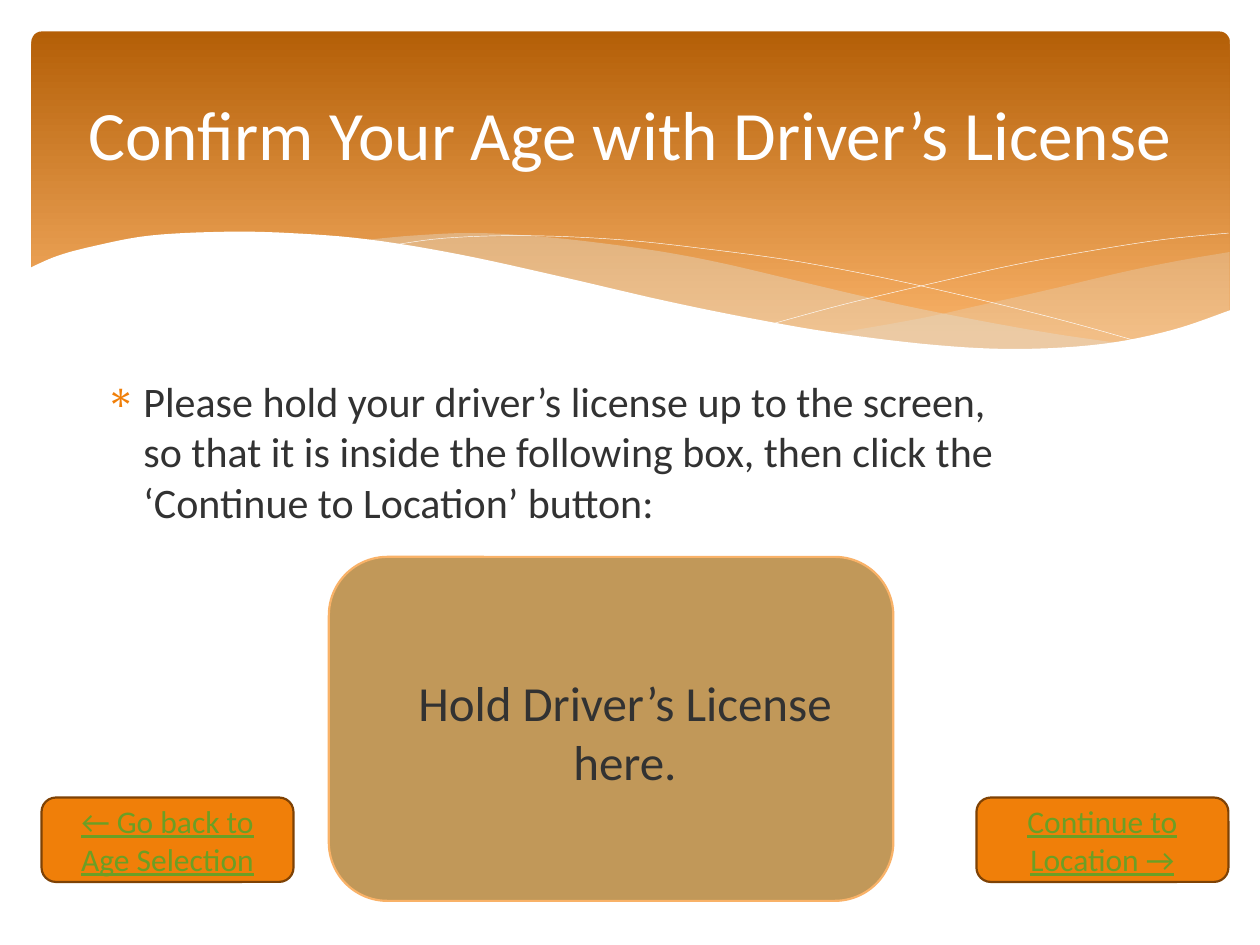
from pptx import Presentation
from pptx import util as u
from pptx.dml.color import RGBColor
from pptx.enum import shapes, text
from pptx.oxml.ns import qn
from lxml import etree

FONT = "Calibri"
WHITE = RGBColor(0xFF, 0xFF, 0xFF)
INK = RGBColor(0x32, 0x32, 0x32)
ORANGE = RGBColor(0xF0, 0x7F, 0x09)
DARK_ORANGE = RGBColor(0xB4, 0x5F, 0x07)
LIGHT_ORANGE = RGBColor(0xF9, 0xB2, 0x68)
BROWN = RGBColor(0x7E, 0x42, 0x05)
TAN = RGBColor(0xC1, 0x98, 0x59)
SAND = RGBColor(0xE3, 0xDE, 0xD1)
GREEN = RGBColor(0x6B, 0x9F, 0x25)

# Knots of the banner's waves, in inches
RIGHT_TOP = [(6.61, 2.65), (7.29, 2.53), (7.79, 2.42), (8.32, 2.3),
             (8.91, 2.16), (9.35, 2.07), (9.76, 2)]
RIGHT_BOTTOM = [(9.76, 2.47), (9.49, 2.57), (9.13, 2.67), (8.63, 2.75),
                (8.03, 2.78), (7.32, 2.74), (6.61, 2.65)]
MIDDLE_TOP = [(2.86, 1.91), (3.28, 1.87), (3.8, 1.85), (4.42, 1.89),
              (5.14, 1.98), (5.69, 2.08), (6.29, 2.22), (7.06, 2.4),
              (7.75, 2.54), (8.37, 2.65), (8.93, 2.73)]
MIDDLE_BOTTOM = [(8.93, 2.73), (8.57, 2.77), (8.07, 2.78), (7.48, 2.76),
                 (6.8, 2.68), (6.01, 2.55), (5.3, 2.4), (4.49, 2.22),
                 (3.83, 2.07), (3.42, 1.99), (2.86, 1.91)]
FALLING_LINE = [(3.09, 1.95), (3.53, 1.89), (4.16, 1.87), (4.89, 1.9),
                (5.56, 1.97), (6.36, 2.08), (7.27, 2.26), (8.31, 2.51),
                (9.07, 2.72)]
RISING_LINE = [(6.13, 2.57), (6.72, 2.41), (7.48, 2.23), (8.06, 2.1),
               (8.66, 1.99), (9.24, 1.9), (9.75, 1.85)]
PAPER_EDGE = [(9.77, 2.46), (9.3, 2.62), (8.75, 2.73), (8.09, 2.77),
              (7.44, 2.74), (6.68, 2.65), (6.03, 2.54), (5.29, 2.39),
              (4.47, 2.2), (3.65, 2.02), (2.92, 1.9), (2.3, 1.85),
              (1.77, 1.84), (1.19, 1.87), (0.76, 1.95), (0.46, 2.03),
              (0.23, 2.13)]
PAPER_FOOT = [(0.23, 3.29), (9.77, 3.29)]


def smooth(knots, steps=6):
    """Return points on a Catmull-Rom curve through the knots."""
    padded = [knots[0], *knots, knots[-1]]
    points = [knots[0]]
    for a, b, c, d in zip(padded, padded[1:], padded[2:], padded[3:]):
        for i in range(1, steps + 1):
            t = i / steps
            points.append(tuple(
                q + t / 2 * (r - p + t * (2 * p - 5 * q + 4 * r - s
                                          + t * (3 * q - p - 3 * r + s)))
                for p, q, r, s in zip(a, b, c, d)))
    return points


class Deck:
    def __init__(self):
        self.prs = Presentation()
        self.prs.slide_width = u.Inches(10)
        self.prs.slide_height = u.Inches(7.5)
        self.s = self.prs.slides.add_slide(self.prs.slide_layouts[6])

    def paint(self, sp, fill=None, line=None, width=1.25, alpha=None):
        sp.shadow.inherit = False
        if fill is None:
            sp.fill.background()
        else:
            sp.fill.solid()
            sp.fill.fore_color.rgb = fill
        if alpha:
            color = sp._element.spPr.find(".//" + qn("a:srgbClr"))
            etree.SubElement(color, qn("a:alpha"), val=str(alpha * 1000))
        if line is None:
            sp.line.fill.background()
        else:
            sp.line.color.rgb = line
            sp.line.width = u.Pt(width)

    def box(self, at, fill, line=None, corner=0.17):
        sp = self.s.shapes.add_shape(shapes.MSO_SHAPE.ROUNDED_RECTANGLE,
                                     *map(u.Inches, at))
        sp.adjustments[0] = corner
        self.paint(sp, fill, line)
        return sp

    def banner(self, at):
        sp = self.box(at, DARK_ORANGE, corner=0.03)
        sp.fill.gradient()
        sp.fill.gradient_angle = 270
        stops = [(0, DARK_ORANGE), (0.9, LIGHT_ORANGE)]
        for stop, (position, color) in zip(sp.fill.gradient_stops, stops):
            stop.position = position
            stop.color.rgb = color

    def wave(self, points, closed=True, **paint):
        start, *rest = [(u.Inches(x), u.Inches(y)) for x, y in points]
        builder = self.s.shapes.build_freeform(*start)
        builder.add_line_segments(rest, close=closed)
        self.paint(builder.convert_to_shape(), **paint)

    def set_text(self, sp, words, size, color, align=text.PP_ALIGN.CENTER,
                 anchor=text.MSO_ANCHOR.MIDDLE, underline=False):
        tf = sp.text_frame
        tf.text = words
        tf.word_wrap = True
        tf.vertical_anchor = anchor
        p = tf.paragraphs[0]
        p.alignment = align
        font = p.runs[0].font
        font.name, font.size, font.color.rgb = FONT, u.Pt(size), color
        if underline:
            font.underline = True
        return p

    def label(self, at, words, size, color, top=0.05, **style):
        sp = self.s.shapes.add_textbox(*map(u.Inches, at))
        sp.text_frame.margin_top = u.Inches(top)
        return self.set_text(sp, words, size, color, **style)

    def bullet(self, p, char, color, indent):
        pPr = p._p.get_or_add_pPr()
        pPr.set("marL", str(u.Inches(indent)))
        pPr.set("indent", str(-u.Inches(indent)))
        bu_color = etree.SubElement(pPr, qn("a:buClr"))
        etree.SubElement(bu_color, qn("a:srgbClr"), val=str(color))
        etree.SubElement(pPr, qn("a:buChar"), char=char)

    def button(self, left, words):
        sp = self.box((left, 6.33, 2, 0.67), ORANGE, BROWN)
        self.set_text(sp, words, 18, GREEN, underline=True)


def main():
    deck = Deck()
    deck.banner((0.25, 0.25, 9.51, 2.7))
    deck.wave(smooth(RIGHT_TOP) + smooth(RIGHT_BOTTOM), fill=SAND, alpha=29)
    deck.wave(smooth(MIDDLE_TOP) + smooth(MIDDLE_BOTTOM), fill=SAND, alpha=40)
    for knots in (FALLING_LINE, RISING_LINE):
        deck.wave(smooth(knots), closed=False, line=WHITE, width=0.25)
    deck.wave(smooth(PAPER_EDGE) + PAPER_FOOT, fill=WHITE)

    deck.box((2.61, 4.42, 4.48, 2.73), TAN, LIGHT_ORANGE)
    deck.label((0.5, 0.37, 9, 1.37), "Confirm Your Age with Driver’s License",
               39.6, WHITE)
    p = deck.label((0.74, 2.93, 7.34, 3.77),
                   "Please hold your driver’s license up to the screen, so that "
                   "it is inside the following box, then click the ‘Continue to "
                   "Location’ button:", 24, INK,
                   align=text.PP_ALIGN.LEFT, anchor=text.MSO_ANCHOR.TOP)
    deck.bullet(p, "∗", ORANGE, 0.3)
    deck.label((2.87, 4.2, 4.18, 2.69), "Hold Driver’s License here.", 28, INK,
               top=1.14, anchor=text.MSO_ANCHOR.TOP)
    deck.button(7.75, "Continue to Location →")
    deck.button(0.33, "← Go back to Age Selection")
    deck.prs.save("out.pptx")


if __name__ == "__main__":
    main()
